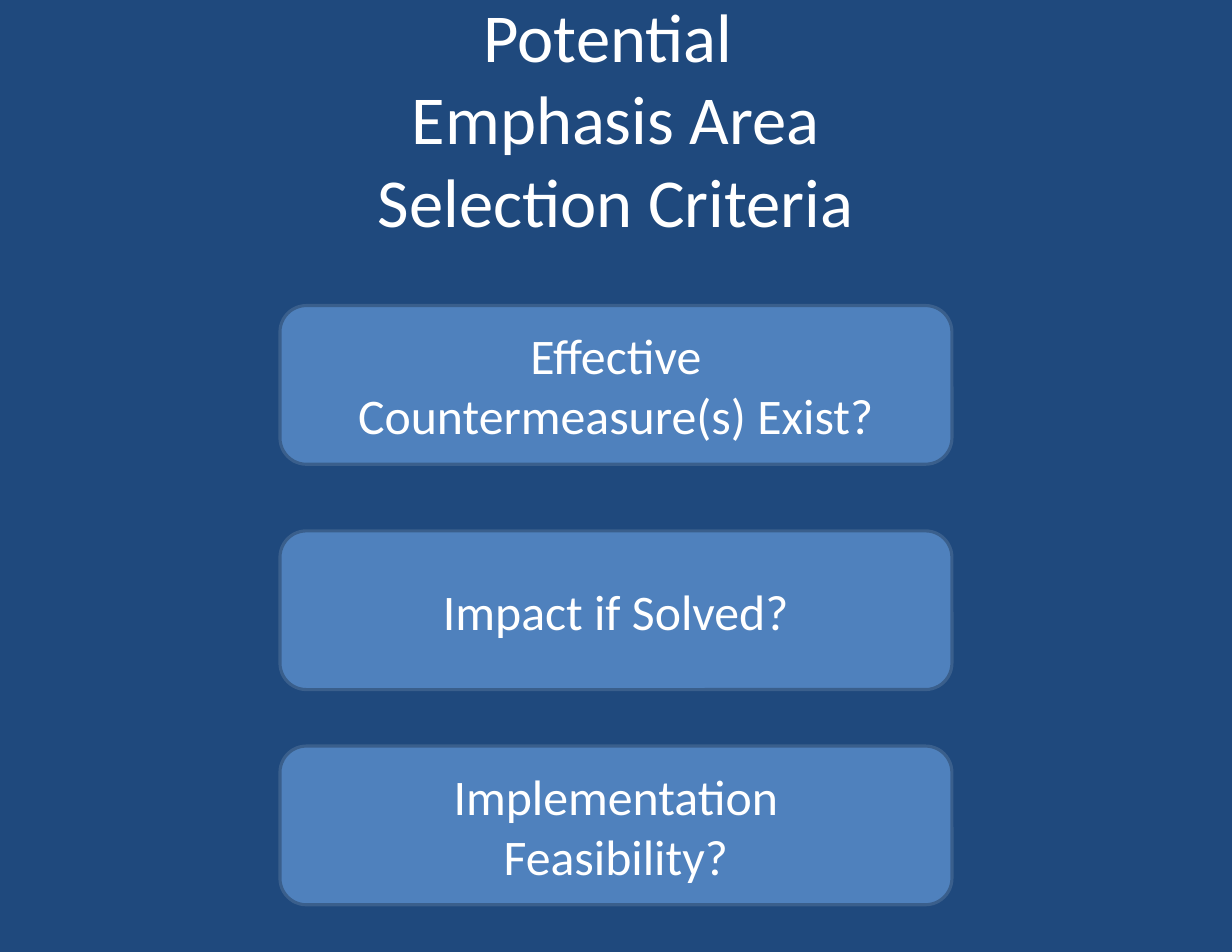
from pptx import Presentation
from pptx.dml.color import RGBColor
from pptx.enum.shapes import MSO_SHAPE
from pptx.enum.text import MSO_ANCHOR, PP_ALIGN
from pptx.util import Cm, Pt

NAVY, BLUE, EDGE, WHITE = "1F497D", "4F81BD", "3A5F8C", "FFFFFF"
TITLE = ["Potential ", "Emphasis Area", " Selection Criteria "]
CARDS = [
    (6.93, ["Effective", "Countermeasure(s) Exist?"]),
    (12.04, ["Impact if Solved?"]),
    (16.92, ["Implementation", "Feasibility?"]),
]


def paint(color, code):
    """Set a colour format from a hex string."""
    color.rgb = RGBColor.from_string(code)


def set_frame(frame):
    """Centre the text vertically and set the margins."""
    frame.word_wrap = True
    frame.vertical_anchor = MSO_ANCHOR.MIDDLE
    frame.margin_left = frame.margin_right = Cm(0.28)
    frame.margin_top = frame.margin_bottom = Cm(0.15)


def add_run(para, text, size):
    """Add one white run to a centred paragraph."""
    para.alignment = PP_ALIGN.CENTER
    run = para.add_run()
    run.text = text
    run.font.name = "Calibri"
    run.font.size = Pt(size)
    paint(run.font.color, WHITE)


def add_title(slide, box, lines):
    """Place the title as one paragraph with line breaks."""
    frame = slide.shapes.add_textbox(*map(Cm, box)).text_frame
    set_frame(frame)
    para = frame.paragraphs[0]
    for i, line in enumerate(lines):
        if i:
            para.add_line_break()
        add_run(para, line, 44.1)


def add_card(slide, box, lines):
    """Place one rounded card with a paragraph per line."""
    card = slide.shapes.add_shape(MSO_SHAPE.ROUNDED_RECTANGLE, *map(Cm, box))
    card.shadow.inherit = False
    card.fill.solid()
    paint(card.fill.fore_color, BLUE)
    paint(card.line.color, EDGE)
    card.line.width = Pt(2)
    frame = card.text_frame
    set_frame(frame)
    for i, line in enumerate(lines):
        para = frame.add_paragraph() if i else frame.paragraphs[0]
        add_run(para, line, 32)


def main():
    """Build and save the slide."""
    deck = Presentation()
    deck.slide_width, deck.slide_height = Cm(27.94), Cm(21.59)
    slide = deck.slides.add_slide(deck.slide_layouts[6])
    slide.background.fill.solid()
    paint(slide.background.fill.fore_color, NAVY)
    add_title(slide, (1.4, 0.86, 25.14, 3.6), TITLE)
    for top, lines in CARDS:
        add_card(slide, (6.35, top, 15.24, 3.6), lines)
    deck.save("out.pptx")


if __name__ == "__main__":
    main()
